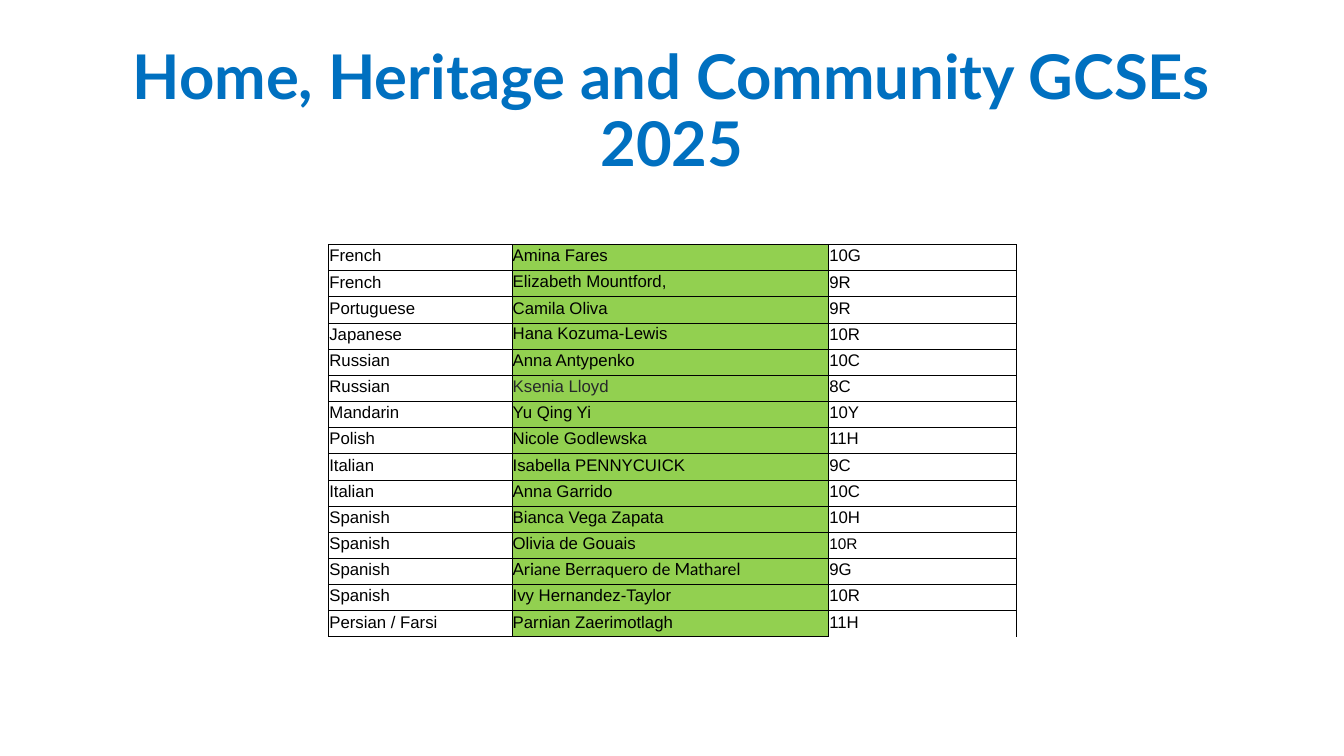
import pptx
import pptx.dml.color
import pptx.enum.text
import pptx.oxml
import pptx.oxml.ns
import pptx.util

Cm = pptx.util.Cm
Pt = pptx.util.Pt
RGBColor = pptx.dml.color.RGBColor
Anchor = pptx.enum.text.MSO_ANCHOR

BLUE = RGBColor(0x00, 0x70, 0xC0)
GREEN = RGBColor(0x92, 0xD0, 0x50)
BLACK = RGBColor(0x00, 0x00, 0x00)
CHARCOAL = RGBColor(0x26, 0x28, 0x2A)

ENTRIES = [
    ("French", "Amina Fares", "10G"),
    ("French", "Elizabeth Mountford,", "9R"),
    ("Portuguese", "Camila Oliva", "9R"),
    ("Japanese", "Hana Kozuma-Lewis", "10R"),
    ("Russian", "Anna Antypenko", "10C"),
    ("Russian", "Ksenia Lloyd", "8C"),
    ("Mandarin", "Yu Qing Yi", "10Y"),
    ("Polish", "Nicole Godlewska", "11H"),
    ("Italian", "Isabella PENNYCUICK", "9C"),
    ("Italian", "Anna Garrido", "10C"),
    ("Spanish", "Bianca Vega Zapata", "10H"),
    ("Spanish", "Olivia de Gouais", "10R"),
    ("Spanish", "Ariane Berraquero de Matharel", "9G"),
    ("Spanish", "Ivy Hernandez-Taylor", "10R"),
    ("Persian / Farsi", "Parnian Zaerimotlagh", "11H"),
]
NAME_COLUMN = 1
LAST_CELL = (len(ENTRIES) - 1, 2)

# Cells that differ from the table's usual style, by (row, column)
EXCEPTIONS = {
    (1, 1): {"anchor": Anchor.MIDDLE},
    (3, 1): {"anchor": Anchor.MIDDLE},
    (5, 1): {"color": CHARCOAL},
    (11, 2): {"size": 11},
    (12, 1): {"anchor": Anchor.MIDDLE, "font_name": "Lato"},
    LAST_CELL: {"sides": "LRT"},
}


class SlideBuilder:
    title_font = "Lato"
    table_font = "Arial"
    border_width = Pt(0.5)

    def __init__(self, slide):
        self.slide = slide

    def set_font(self, paragraph, name, size, color, bold=False):
        font = paragraph.font
        font.name = name
        font.size = Pt(size)
        font.color.rgb = color
        font.bold = bold

    def add_title(self, text, left, top, width, height):
        shape = self.slide.shapes.add_textbox(left, top, width, height)
        frame = shape.text_frame
        frame.word_wrap = True
        frame.vertical_anchor = Anchor.MIDDLE
        paragraph = frame.paragraphs[0]
        paragraph.text = text
        paragraph.alignment = pptx.enum.text.PP_ALIGN.CENTER
        paragraph.line_spacing = 0.9
        self.set_font(paragraph, self.title_font, 44, BLUE, bold=True)

    def set_borders(self, cell, sides):
        properties = cell._tc.get_or_add_tcPr()
        namespace = pptx.oxml.ns.nsdecls("a")
        for side in "LRTB":
            line = f'<a:solidFill><a:srgbClr val="{BLACK}"/></a:solidFill>'
            if side not in sides:
                line = "<a:noFill/>"
            properties.append(pptx.oxml.parse_xml(
                f'<a:ln{side} {namespace} w="{self.border_width}">{line}</a:ln{side}>'))

    def style_cell(self, cell, text, fill, font_name=table_font, size=12,
                   color=BLACK, anchor=Anchor.BOTTOM, sides="LRTB"):
        cell.margin_left = cell.margin_right = cell.margin_top = Cm(0.02)
        cell.margin_bottom = Cm(0.13)
        cell.vertical_anchor = anchor
        self.set_borders(cell, sides)
        if fill is None:
            cell.fill.background()
        else:
            cell.fill.solid()
            cell.fill.fore_color.rgb = fill
        paragraph = cell.text_frame.paragraphs[0]
        paragraph.text = text
        self.set_font(paragraph, font_name, size, color)

    def add_table(self, entries, left, top, column_widths, row_height):
        table = self.slide.shapes.add_table(
            len(entries), len(column_widths), left, top,
            sum(column_widths), row_height * len(entries)).table
        table.first_row = False
        table.horz_banding = False
        for column, width in zip(table.columns, column_widths):
            column.width = width
        for row_index, entry in enumerate(entries):
            table.rows[row_index].height = row_height
            for column_index, text in enumerate(entry):
                fill = GREEN if column_index == NAME_COLUMN else None
                self.style_cell(table.cell(row_index, column_index), text, fill,
                                **EXCEPTIONS.get((row_index, column_index), {}))


def main():
    presentation = pptx.Presentation()
    presentation.slide_width = Cm(33.87)
    presentation.slide_height = Cm(19.05)
    builder = SlideBuilder(presentation.slides.add_slide(presentation.slide_layouts[6]))

    # Heading
    builder.add_title("Home, Heritage and Community GCSEs 2025",
                      Cm(2.33), Cm(1.01), Cm(29.21), Cm(3.68))

    # Language, student and class
    builder.add_table(ENTRIES, Cm(8.28), Cm(6.16),
                      [Cm(4.62), Cm(7.98), Cm(4.72)], Cm(0.56))

    presentation.save("out.pptx")


if __name__ == "__main__":
    main()
